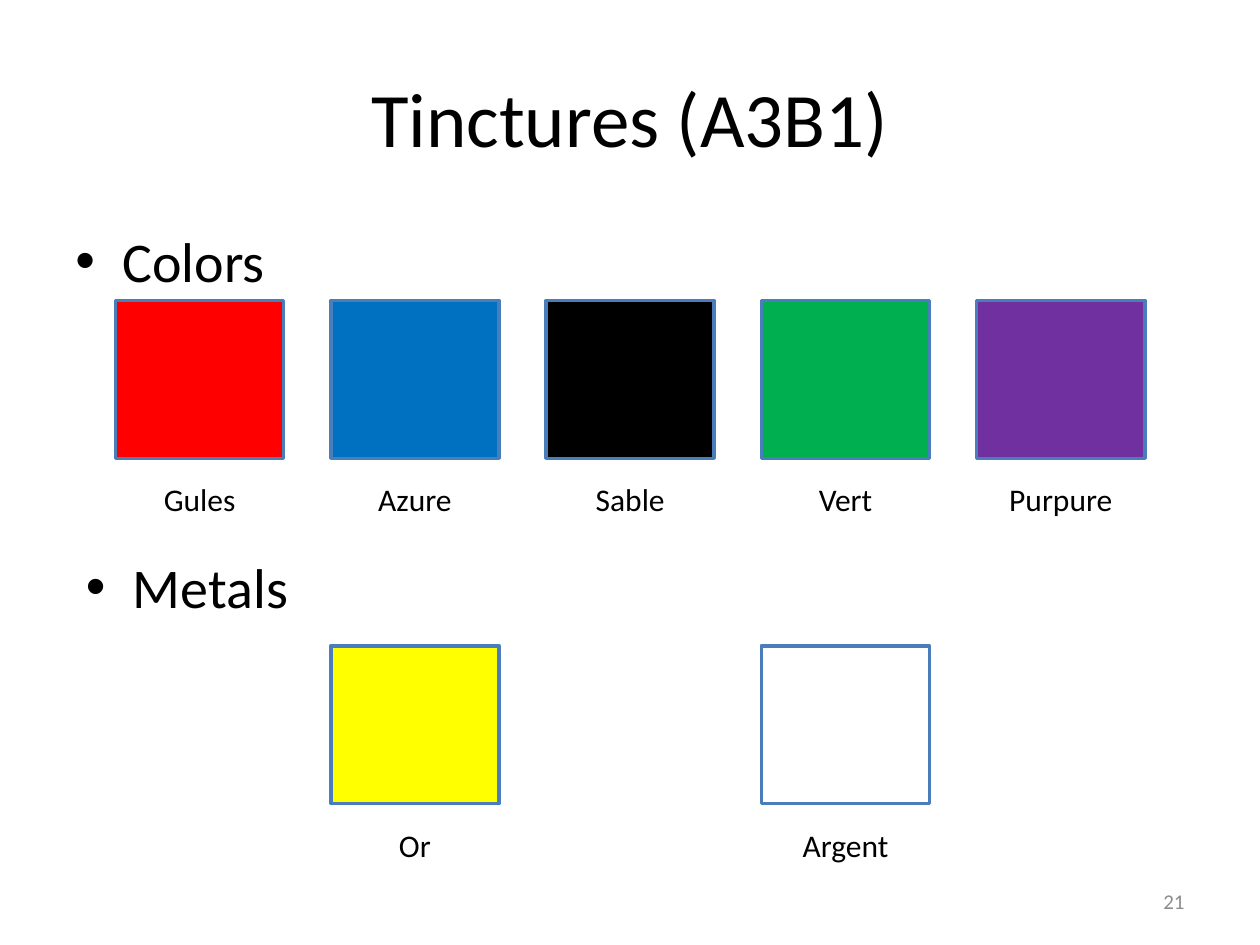
from lxml.etree import SubElement
from pptx import Presentation
from pptx.dml.color import RGBColor
from pptx.enum.shapes import MSO_SHAPE as SHAPE
from pptx.enum.text import MSO_ANCHOR as ANCHOR, MSO_AUTO_SIZE as AUTO, PP_ALIGN as ALIGN
from pptx.oxml.ns import qn
from pptx.util import Cm, Pt

# Content
TITLE = "Tinctures (A3B1)"
PAGE = "21"
HEADINGS = [("Colors", 1.27, 4.45), ("Metals", 1.48, 11.01)]  # text, left, top

# Tinctures: name, fill, column, label width; one row each for colors and metals
COLORS = [
    ("Gules", "FF0000", 0, 2.0),
    ("Azure", "0070C0", 1, 2.05),
    ("Sable", "000000", 2, 2.0),
    ("Vert", "00B050", 3, 1.65),
    ("Purpure", "7030A0", 4, 2.65),
]
METALS = [("Or", "FFFF00", 1, 1.3), ("Argent", "FFFFFF", 3, 2.3)]
ROWS = [(6.06, COLORS), (13.02, METALS)]

# Swatch grid, in centimetres
LEFT, PITCH = 2.33, 4.34
SWATCH_W, SWATCH_H = 3.39, 3.18
LABEL_DROP, LABEL_H = 3.5, 1.02
OUTLINE = "4A7EBB"


def rgb(value):
    return RGBColor.from_string(value)


def write(sp, text, size=18, color="000000", align=ALIGN.CENTER,
          anchor=ANCHOR.TOP, wrap=True, grow=False, bullet=False):
    tf = sp.text_frame
    tf.word_wrap = wrap
    tf.auto_size = AUTO.SHAPE_TO_FIT_TEXT if grow else AUTO.NONE
    tf.vertical_anchor = anchor
    p = tf.paragraphs[0]
    p.alignment = align
    if bullet:
        pPr = p._p.get_or_add_pPr()
        pPr.set("marL", str(Cm(0.95)))
        pPr.set("indent", str(-Cm(0.95)))
        SubElement(pPr, qn("a:buFont"), typeface="Arial")
        SubElement(pPr, qn("a:buChar"), char="•")
    r = p.add_run()
    r.text = text
    r.font.name = "Calibri"
    r.font.size = Pt(size)
    r.font.color.rgb = rgb(color)


def add_text(s, text, left, top, width, height, **fmt):
    sp = s.shapes.add_textbox(Cm(left), Cm(top), Cm(width), Cm(height))
    write(sp, text, **fmt)


def add_swatch(s, name, fill, left, top, label_w):
    sp = s.shapes.add_shape(SHAPE.RECTANGLE, Cm(left), Cm(top),
                            Cm(SWATCH_W), Cm(SWATCH_H))
    sp.shadow.inherit = False
    sp.fill.solid()
    sp.fill.fore_color.rgb = rgb(fill)
    sp.line.color.rgb = rgb(OUTLINE)
    sp.line.width = Pt(2)
    add_text(s, name, left + (SWATCH_W - label_w) / 2, top + LABEL_DROP,
             label_w, LABEL_H, wrap=False, grow=True)


def main():
    prs = Presentation()
    prs.slide_width, prs.slide_height = Cm(25.4), Cm(19.05)
    s = prs.slides.add_slide(prs.slide_layouts[5])

    # Title
    title = s.shapes.title
    title.left, title.top, title.width, title.height = (
        Cm(v) for v in (1.27, 0.76, 22.86, 3.18))
    write(title, TITLE, size=44, anchor=ANCHOR.MIDDLE)

    # Bulleted headings
    for text, left, top in HEADINGS:
        add_text(s, text, left, top, 22.86, 1.47,
                 size=32, align=ALIGN.LEFT, bullet=True)

    # Swatches with their names
    for top, tinctures in ROWS:
        for name, fill, column, label_w in tinctures:
            add_swatch(s, name, fill, LEFT + column * PITCH, top, label_w)

    # Page number
    add_text(s, PAGE, 18.21, 17.65, 5.92, 1.02, size=12, color="8C8C8C",
             align=ALIGN.RIGHT, anchor=ANCHOR.MIDDLE)

    prs.save("out.pptx")


if __name__ == "__main__":
    main()
